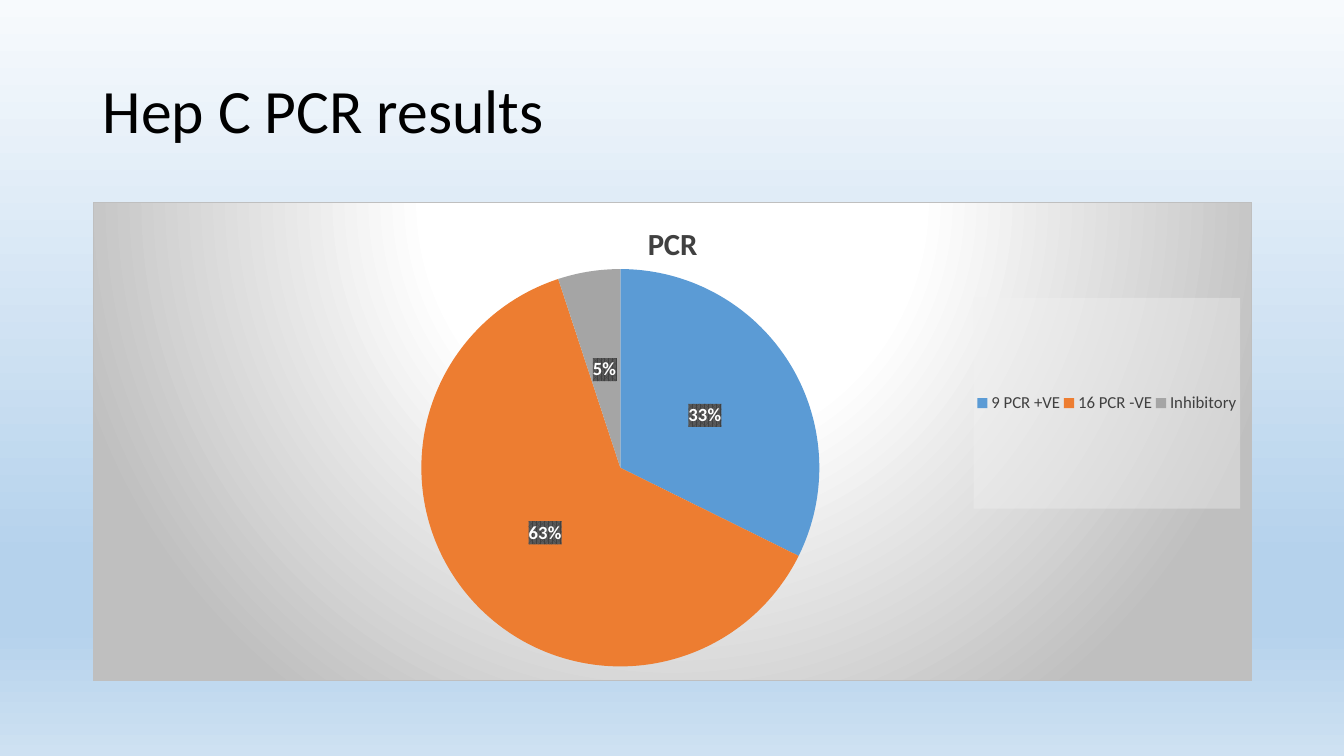
"""Build the Hep C PCR results slide: a title above a pie chart."""
import pptx
import pptx.util
import pptx.chart.data
import pptx.dml.color
import pptx.enum.chart
import pptx.enum.text
import pptx.oxml
import pptx.oxml.ns

RGB = pptx.dml.color.RGBColor
BLACK = RGB(0x00, 0x00, 0x00)
WHITE = RGB(0xFF, 0xFF, 0xFF)
CHARCOAL = RGB(0x40, 0x40, 0x40)
SLATE = RGB(0x59, 0x59, 0x59)
SILVER = RGB(0xBF, 0xBF, 0xBF)
MIST = RGB(0xF2, 0xF2, 0xF2)
SKY = [(0, RGB(0xF7, 0xFA, 0xFD)), (74, RGB(0xB5, 0xD2, 0xEC)),
       (83, RGB(0xB5, 0xD2, 0xEC)), (100, RGB(0xCE, 0xE1, 0xF2))]
SPOTLIGHT = [(0, WHITE), (39, WHITE), (100, SILVER)]
RESULTS = [("9 PCR +VE", 32, RGB(0x5B, 0x9B, 0xD5)),
           ("16 PCR -VE", 62, RGB(0xED, 0x7D, 0x31)),
           ("Inhibitory", 5, RGB(0xA5, 0xA5, 0xA5))]
NAMESPACES = pptx.oxml.ns.nsdecls("a", "c")


def gradient(stops, direction):
    """Return gradient fill markup for (percent, colour) stops."""
    marks = "".join(f'<a:gs pos="{percent * 1000}"><a:srgbClr val="{colour}"/></a:gs>'
                    for percent, colour in stops)
    return f'<a:gradFill {NAMESPACES} rotWithShape="1"><a:gsLst>{marks}</a:gsLst>{direction}</a:gradFill>'


def layout(x, y, w, h, target=""):
    """Return a manual chart layout element in shares of the chart."""
    sizes = "".join(f'<c:{key} val="{share}"/>' for key, share in zip("xywh", (x, y, w, h)))
    return pptx.oxml.parse_xml(
        f'<c:layout {NAMESPACES}><c:manualLayout>{target}<c:xMode val="edge"/>'
        f'<c:yMode val="edge"/>{sizes}</c:manualLayout></c:layout>')


deck = pptx.Presentation()
deck.slide_width = pptx.util.Inches(13.33)
deck.slide_height = pptx.util.Inches(7.5)
slide = deck.slides.add_slide(deck.slide_layouts[5])
margin = pptx.util.Inches(0.92)
content_width = pptx.util.Inches(11.5)

backdrop = slide.background.fill
backdrop.solid()
background_fill = slide._element.cSld.bg.bgPr[0]
background_fill.getparent().replace(
    background_fill, pptx.oxml.parse_xml(gradient(SKY, '<a:lin ang="5400000" scaled="0"/>')))

heading = slide.shapes.title
heading.left, heading.top = margin, pptx.util.Inches(0.4)
heading.width, heading.height = content_width, pptx.util.Inches(1.45)
heading.text_frame.text = "Hep C PCR results"
heading.text_frame.vertical_anchor = pptx.enum.text.MSO_ANCHOR.MIDDLE
heading_line = heading.text_frame.paragraphs[0]
heading_line.alignment = pptx.enum.text.PP_ALIGN.LEFT
heading_line.line_spacing = 0.9

shares = pptx.chart.data.CategoryChartData()
shares.categories = [name for name, _, _ in RESULTS]
shares.add_series("PCR", [value for _, value, _ in RESULTS])
pie = slide.shapes.add_chart(
    pptx.enum.chart.XL_CHART_TYPE.PIE, margin, pptx.util.Inches(2),
    content_width, pptx.util.Inches(4.76), shares).chart

pie.has_title = True
pie.chart_title.text_frame.text = "PCR"
pie.chart_title.include_in_layout = False
pie.has_legend = True
key = pie.legend
key.position = pptx.enum.chart.XL_LEGEND_POSITION.RIGHT
key.include_in_layout = False

plot = pie.plots[0]
plot.vary_by_categories = True
for index, (_, _, colour) in enumerate(RESULTS):
    wedge = plot.series[0].points[index].format
    wedge.fill.solid()
    wedge.fill.fore_color.rgb = colour
    wedge.line.fill.background()

percents = plot.series[0].data_labels
percents.show_percentage = True
percents.show_value = False
percents.number_format = "0%"
percents.number_format_is_linked = False
positive_label = plot.series[0].points[0].data_label
positive_label.text_frame.text = "33%"
for label in (percents, positive_label):
    label.position = pptx.enum.chart.XL_LABEL_POSITION.CENTER

FORMATS = [
    (pie.font, 10, BLACK, False),
    (heading_line.runs[0].font, 44, BLACK, False),
    (pie.chart_title.text_frame.paragraphs[0].runs[0].font, 22, CHARCOAL, True),
    (key.font, 12, CHARCOAL, False),
    (percents.font, 13.3, WHITE, True),
    (positive_label.text_frame.paragraphs[0].runs[0].font, 13.3, WHITE, True),
]
for font, size, colour, bold in FORMATS:
    for attribute, value in {"name": "Calibri", "size": pptx.util.Pt(size), "bold": bold}.items():
        setattr(font, attribute, value)
    font.color.rgb = colour

chart_space = pie._chartSpace
plot_area = chart_space.chart.plotArea
for holder in (plot_area, key._element):
    for automatic in holder.findall(pptx.oxml.ns.qn("c:layout")):
        holder.remove(automatic)
plot_area.insert(0, layout(0.02, 0.14, 0.87, 0.83, '<c:layoutTarget val="inner"/>'))
key._element.find(pptx.oxml.ns.qn("c:legendPos")).addnext(layout(0.76, 0.2, 0.23, 0.44))

spotlight = gradient(SPOTLIGHT, '<a:path path="circle"><a:fillToRect l="50000" t="-80000" '
                                'r="50000" b="180000"/></a:path>')
label_fill = (f'<a:pattFill prst="pct75"><a:fgClr><a:srgbClr val="{CHARCOAL}"/></a:fgClr>'
              f'<a:bgClr><a:srgbClr val="{SLATE}"/></a:bgClr></a:pattFill>')
positive_element = percents._element.find(pptx.oxml.ns.qn("c:dLbl"))
PANELS = [
    (chart_space, "c:txPr",
     f'{spotlight}<a:ln w="9525"><a:solidFill><a:srgbClr val="{SILVER}"/></a:solidFill></a:ln>'),
    (key._element, "c:txPr",
     f'<a:solidFill><a:srgbClr val="{MIST}"><a:alpha val="39000"/></a:srgbClr></a:solidFill>'),
    (percents._element, "c:txPr", label_fill),
    (positive_element, "c:dLblPos", label_fill),
]
for panel, follower, fill in PANELS:
    panel.find(pptx.oxml.ns.qn(follower)).addprevious(
        pptx.oxml.parse_xml(f"<c:spPr {NAMESPACES}>{fill}</c:spPr>"))

deck.save("out.pptx")
